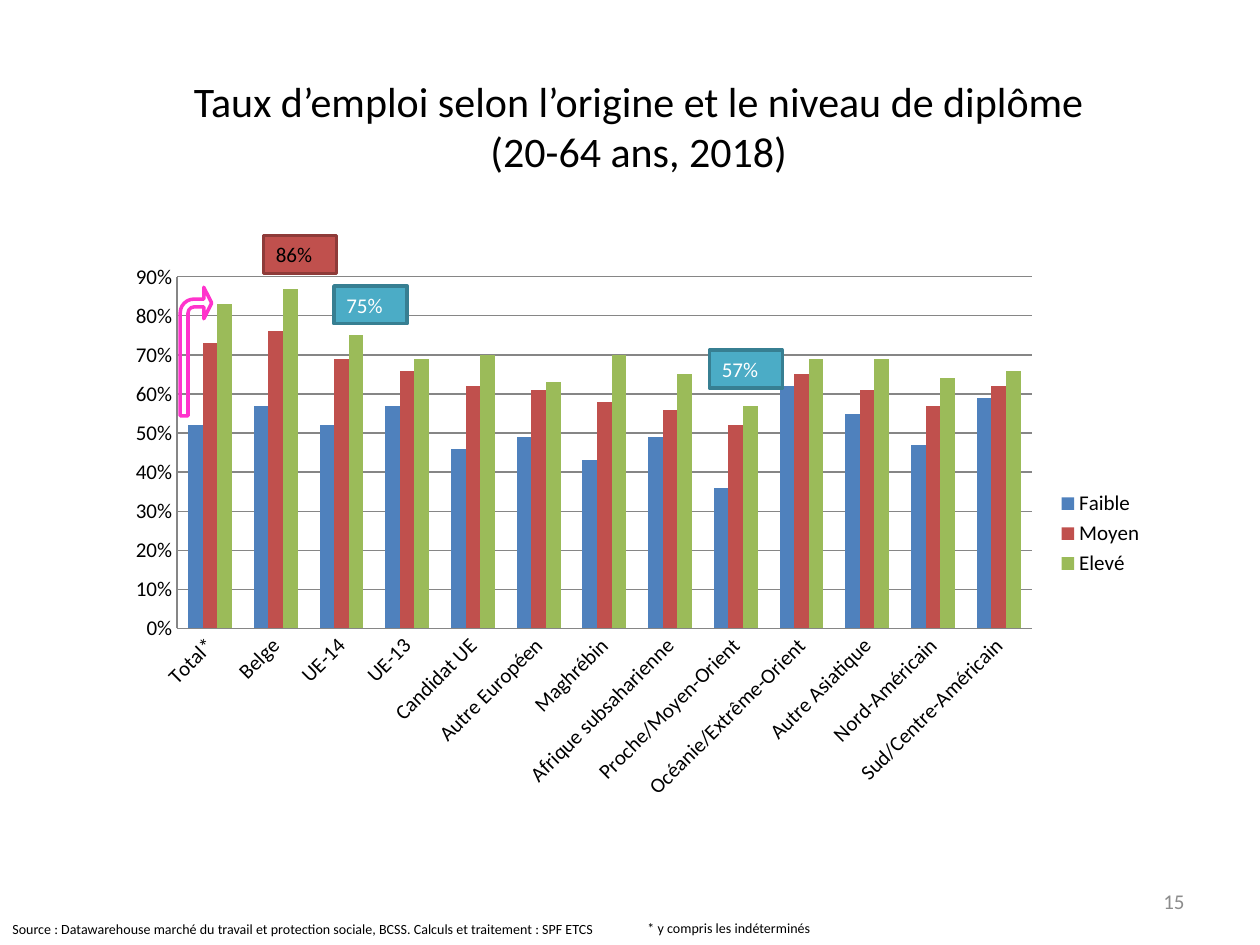
from lxml import etree
from pptx import Presentation
from pptx.chart.data import CategoryChartData
from pptx.dml.color import RGBColor
from pptx.enum.chart import XL_CHART_TYPE, XL_LEGEND_POSITION, XL_TICK_MARK
from pptx.enum.shapes import MSO_SHAPE
from pptx.enum.text import MSO_ANCHOR, PP_ALIGN
from pptx.oxml.ns import qn
from pptx.util import Inches, Pt

COLUMNS = XL_CHART_TYPE.COLUMN_CLUSTERED
RIGHT_LEGEND = XL_LEGEND_POSITION.RIGHT
NO_TICK = XL_TICK_MARK.NONE
RECT, BENT_ARROW = MSO_SHAPE.RECTANGLE, MSO_SHAPE.BENT_ARROW
TOP, MIDDLE = MSO_ANCHOR.TOP, MSO_ANCHOR.MIDDLE
LEFT, CENTER, RIGHT = PP_ALIGN.LEFT, PP_ALIGN.CENTER, PP_ALIGN.RIGHT

FONT = "Calibri"
COLORS = {
    "black": "000000", "white": "FFFFFF", "gray": "8C8C8C", "grid": "868686",
    "blue": "4F81BD", "red": "C0504D", "green": "9BBB59", "teal": "4BACC6",
    "dark_red": "8E3B39", "dark_teal": "377F92", "pink": "FF33CC",
}
ORIGINS = [
    "Total*", "Belge", "UE-14", "UE-13", "Candidat UE", "Autre Européen",
    "Maghrébin", "Afrique subsaharienne", "Proche/Moyen-Orient",
    "Océanie/Extrême-Orient", "Autre Asiatique", "Nord-Américain",
    "Sud/Centre-Américain",
]
LEVELS = [
    ("Faible", "blue", [0.52, 0.57, 0.52, 0.57, 0.46, 0.49, 0.43, 0.49, 0.36,
                        0.62, 0.55, 0.47, 0.59]),
    ("Moyen", "red", [0.73, 0.76, 0.69, 0.66, 0.62, 0.61, 0.58, 0.56, 0.52,
                      0.65, 0.61, 0.57, 0.62]),
    ("Elevé", "green", [0.83, 0.87, 0.75, 0.69, 0.7, 0.63, 0.7, 0.65, 0.57,
                        0.69, 0.69, 0.64, 0.66]),
]
PLOT_LAYOUT = {"x": 0.06, "y": 0.04, "w": 0.82, "h": 0.63}
CALLOUTS = [
    ("86%", 2.09, 1.87, "red", "dark_red", "black"),
    ("75%", 2.65, 2.27, "teal", "dark_teal", "white"),
    ("57%", 5.63, 2.78, "teal", "dark_teal", "white"),
]


def rgb(name):
    """Return the named colour."""
    return RGBColor.from_string(COLORS[name])


def write(sp, text, size=12, color="black", align=LEFT, anchor=TOP, wrap=True):
    """Write one paragraph of formatted text in a shape."""
    tf = sp.text_frame
    tf.word_wrap = wrap
    tf.vertical_anchor = anchor
    p = tf.paragraphs[0]
    p.alignment = align
    r = p.add_run()
    r.text = text
    r.font.name = FONT
    r.font.size = Pt(size)
    r.font.color.rgb = rgb(color)


def add_text(s, box, text, **fmt):
    """Add a text box at the given box."""
    write(s.shapes.add_textbox(*map(Inches, box)), text, **fmt)


def add_outlined(s, kind, box, line, fill=None):
    """Add a preset shape with a 2 pt outline and an optional fill."""
    sp = s.shapes.add_shape(kind, *map(Inches, box))
    sp.shadow.inherit = False
    sp.line.color.rgb = rgb(line)
    sp.line.width = Pt(2)
    if fill:
        sp.fill.solid()
        sp.fill.fore_color.rgb = rgb(fill)
    else:
        sp.fill.background()
    return sp


def set_plot_layout(chart):
    """Fix the inner plot area as fractions of the chart."""
    area = chart._chartSpace.chart.plotArea
    for old in area.findall(qn("c:layout")):
        area.remove(old)
    layout = etree.Element(qn("c:layout"))
    manual = etree.SubElement(layout, qn("c:manualLayout"))
    settings = [("layoutTarget", "inner"), ("xMode", "edge"), ("yMode", "edge")]
    for tag, val in settings + list(PLOT_LAYOUT.items()):
        etree.SubElement(manual, qn(f"c:{tag}")).set("val", str(val))
    area.insert(0, layout)


def style_axes(chart):
    """Format the category and percentage axes."""
    for axis in (chart.category_axis, chart.value_axis):
        axis.major_tick_mark = axis.minor_tick_mark = NO_TICK
        axis.format.line.color.rgb = rgb("grid")
        axis.format.line.width = Pt(0.75)
        axis.tick_labels.font.size = Pt(12)
    body = chart.category_axis._element.find(qn("c:txPr")).find(qn("a:bodyPr"))
    body.set("rot", "-2700000")
    axis = chart.value_axis
    axis.minimum_scale, axis.maximum_scale, axis.major_unit = 0, 0.9, 0.1
    axis.tick_labels.number_format = "0%"
    axis.tick_labels.number_format_is_linked = False
    axis.major_gridlines.format.line.color.rgb = rgb("grid")
    axis.major_gridlines.format.line.width = Pt(0.75)


def add_rate_chart(s, box):
    """Add the employment rates by origin and education level."""
    data = CategoryChartData(number_format="0%")
    data.categories = ORIGINS
    for name, _, rates in LEVELS:
        data.add_series(name, rates)
    chart = s.shapes.add_chart(COLUMNS, *map(Inches, box), data).chart
    chart.has_title = False
    chart.font.name = FONT
    chart.font.size = Pt(12)
    chart.font.color.rgb = rgb("black")
    chart.has_legend = True
    chart.legend.position = RIGHT_LEGEND
    chart.legend.include_in_layout = False
    plot = chart.plots[0]
    plot.gap_width, plot.overlap = 150, 0
    plot.vary_by_categories = False
    for series, (_, color, _) in zip(plot.series, LEVELS):
        series.format.fill.solid()
        series.format.fill.fore_color.rgb = rgb(color)
    style_axes(chart)
    set_plot_layout(chart)


def add_annotations(s):
    """Add the rising arrow and the highlighted rates."""
    arrow = add_outlined(s, BENT_ARROW, (1.43, 2.28, 0.25, 1.02), "pink")
    for i, val in enumerate((0.25, 0.5, 0.25, 0.44)):
        arrow.adjustments[i] = val
    for text, x, y, fill, line, color in CALLOUTS:
        sp = add_outlined(s, RECT, (x, y, 0.58, 0.3), line, fill)
        write(sp, text, color=color)


def add_footer(s):
    """Add the source, the note and the page number."""
    add_text(s, (7.17, 6.95, 2.33, 0.4), "15", color="gray", align=RIGHT,
             anchor=MIDDLE)
    add_text(s, (0, 7.26, 5.07, 0.24),
             "Source : Datawarehouse marché du travail et protection sociale, "
             "BCSS. Calculs et traitement : SPF ETCS", size=8)
    add_text(s, (5.04, 7.25, 1.51, 0.24), "* y compris les indéterminés",
             size=8, wrap=False)


def main():
    """Build and save the slide."""
    prs = Presentation()
    prs.slide_width, prs.slide_height = Inches(10), Inches(7.5)
    s = prs.slides.add_slide(prs.slide_layouts[6])
    add_footer(s)
    add_text(s, (1.42, 0.55, 7.3, 0.91),
             "Taux d’emploi selon l’origine et le niveau de diplôme "
             "(20-64 ans, 2018)", size=24, align=CENTER)
    add_rate_chart(s, (0.91, 2.02, 8.27, 4.43))
    add_annotations(s)
    prs.save("out.pptx")


if __name__ == "__main__":
    main()
